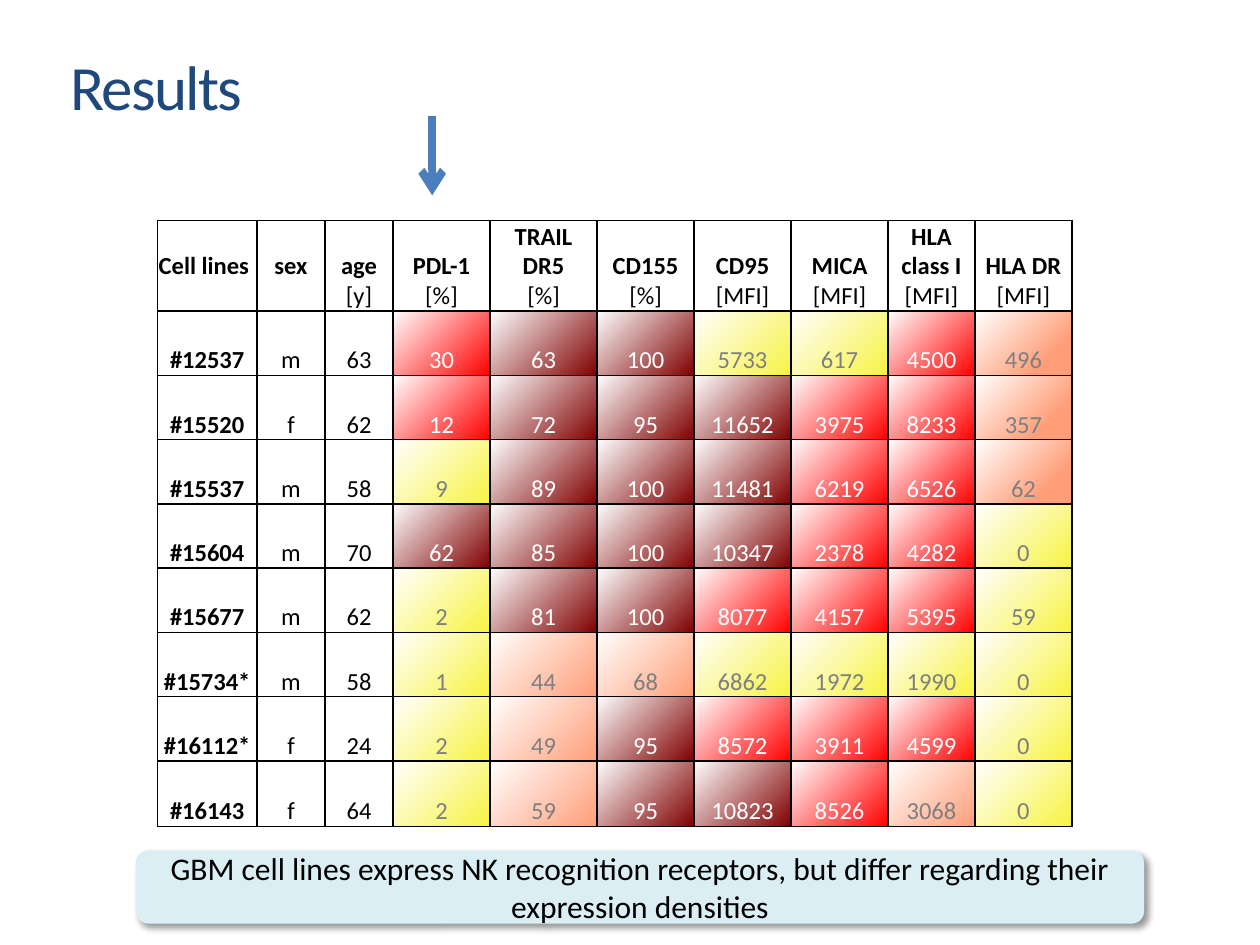
import pptx
import pptx.dml.color
import pptx.enum.shapes
import pptx.enum.text
import pptx.oxml
import pptx.oxml.ns
import pptx.util
from pptx.util import Inches

ALIGN = pptx.enum.text.PP_ALIGN
ANCHOR = pptx.enum.text.MSO_ANCHOR
NAMESPACE = pptx.oxml.ns.nsdecls("a")

COLOURS = {
    "title": "1F497D", "text": "000000", "border": "000000", "white": "FFFFFF",
    "grey": "7F7F7F", "arrow": "4B7EBC", "callout": "DBEEF4", "shadow": "000000",
}
# Expression level: fill colour, text colour
LEVELS = {
    "V": ("800000", "white"),  # very high
    "H": ("FF0000", "white"),  # high
    "M": ("FF9E78", "grey"),   # medium
    "L": ("F7F342", "grey"),   # low
}

COLUMN_WIDTHS = [0.79, 0.54, 0.54, 0.77, 0.85, 0.77, 0.77, 0.77, 0.69, 0.77]
ROW_HEIGHTS = [0.67] + [0.51] * 7 + [0.52]
HEADERS = [
    ("Cell lines", ""), ("sex", ""), ("age", "[y]"), ("PDL-1", "[%]"),
    ("TRAIL DR5", "[%]"), ("CD155", "[%]"), ("CD95", "[MFI]"),
    ("MICA", "[MFI]"), ("HLA class I", "[MFI]"), ("HLA DR", "[MFI]"),
]
# Cell line, sex, age and receptor values, then the level of each receptor
CELL_LINES = [
    ("#12537 m 63 30 63 100 5733 617 4500 496", "HVVLLHM"),
    ("#15520 f 62 12 72 95 11652 3975 8233 357", "HVVVHHM"),
    ("#15537 m 58 9 89 100 11481 6219 6526 62", "LVVVHHM"),
    ("#15604 m 70 62 85 100 10347 2378 4282 0", "VVVVHHL"),
    ("#15677 m 62 2 81 100 8077 4157 5395 59", "LVVHHHL"),
    ("#15734* m 58 1 44 68 6862 1972 1990 0", "LMMLLLL"),
    ("#16112* f 24 2 49 95 8572 3911 4599 0", "LMVHHHL"),
    ("#16143 f 64 2 59 95 10823 8526 3068 0", "LMVVHML"),
]
FIRST_RECEPTOR = 3
HLA_DR = 9


def rgb(name):
    return pptx.dml.color.RGBColor.from_string(COLOURS[name])


def add_xml(parent, xml):
    """Append a DrawingML element, its namespace put in after the tag name."""
    tag, rest = xml.split(" ", 1)
    parent.append(pptx.oxml.parse_xml(f"{tag} {NAMESPACE} {rest}"))


def write_text(paragraph, text, size=14, colour="text", bold=False,
               align=ALIGN.CENTER, spacing=None):
    paragraph.alignment = align
    run = paragraph.add_run()
    run.text = text
    font = run.font
    font.name, font.size, font.bold = "Calibri", pptx.util.Pt(size), bold
    font.color.rgb = rgb(colour)
    if spacing is not None:
        run._r.get_or_add_rPr().set("spc", str(spacing))


def add_title(slide, text):
    title = slide.shapes.title
    title.left, title.top = Inches(0.46), Inches(0.14)
    title.width, title.height = Inches(9), Inches(1.08)
    title.text_frame.vertical_anchor = ANCHOR.MIDDLE
    write_text(title.text_frame.paragraphs[0], text, size=36, colour="title",
               align=ALIGN.LEFT, spacing=-100)


def format_cell(cell, bottom=0):
    cell.vertical_anchor = ANCHOR.BOTTOM
    cell.margin_left = cell.margin_right = cell.margin_top = Inches(0.01)
    cell.margin_bottom = Inches(bottom)
    properties = cell._tc.get_or_add_tcPr()
    for side in ("lnL", "lnR", "lnT", "lnB"):
        add_xml(properties, f'<a:{side} w="12700"><a:solidFill>'
                f'<a:srgbClr val="{COLOURS["border"]}"/></a:solidFill></a:{side}>')
    cell.fill.background()


def shade_cell(cell, colour, start=0):
    """Radial gradient from the bottom right corner, fading to white."""
    properties = cell._tc.get_or_add_tcPr()
    properties.remove(properties.find(pptx.oxml.ns.qn("a:noFill")))
    add_xml(properties, f'<a:gradFill rotWithShape="1"><a:gsLst>'
            f'<a:gs pos="{start * 1000}"><a:srgbClr val="{colour}"/></a:gs>'
            f'<a:gs pos="100000"><a:srgbClr val="{COLOURS["white"]}"/></a:gs>'
            '</a:gsLst><a:path path="circle">'
            '<a:fillToRect l="100000" t="100000"/></a:path></a:gradFill>')


def fill_header(table):
    for column, (label, unit) in enumerate(HEADERS):
        cell = table.cell(0, column)
        # Labels without a unit stay level with the other labels
        format_cell(cell, bottom=0 if unit else 0.24)
        write_text(cell.text_frame.paragraphs[0], label, bold=True,
                   align=ALIGN.CENTER if column else ALIGN.LEFT)
        if unit:
            write_text(cell.text_frame.add_paragraph(), unit)


def fill_row(table, row, values, levels):
    for column, value in enumerate(values.split()):
        cell = table.cell(row, column)
        format_cell(cell)
        colour = "text"
        if column >= FIRST_RECEPTOR:
            level = levels[column - FIRST_RECEPTOR]
            fill, colour = LEVELS[level]
            shade_cell(cell, fill, 24 if level == "M" and column == HLA_DR else 0)
        write_text(cell.text_frame.paragraphs[0], value, colour=colour,
                   bold=column == 0)


def add_expression_table(slide):
    table = slide.shapes.add_table(
        len(ROW_HEIGHTS), len(COLUMN_WIDTHS), Inches(1.25), Inches(1.75),
        Inches(sum(COLUMN_WIDTHS)), Inches(sum(ROW_HEIGHTS))).table
    table.first_row = table.horz_banding = False
    for column, width in zip(table.columns, COLUMN_WIDTHS):
        column.width = Inches(width)
    for row, height in zip(table.rows, ROW_HEIGHTS):
        row.height = Inches(height)
    fill_header(table)
    for row, (values, levels) in enumerate(CELL_LINES, start=1):
        fill_row(table, row, values, levels)


def add_arrow(slide, x, top, bottom):
    arrow = slide.shapes.add_connector(
        pptx.enum.shapes.MSO_CONNECTOR.STRAIGHT,
        Inches(x), Inches(top), Inches(x), Inches(bottom))
    arrow.line.color.rgb = rgb("arrow")
    arrow.line.width = pptx.util.Pt(4.5)
    add_xml(arrow.line._get_or_add_ln(), '<a:tailEnd type="arrow"/>')
    add_xml(arrow._element.spPr, "<a:effectLst />")


def add_callout(slide, text):
    callout = slide.shapes.add_shape(
        pptx.enum.shapes.MSO_SHAPE.ROUNDED_RECTANGLE,
        Inches(1.08), Inches(6.75), Inches(8), Inches(0.58))
    callout.fill.solid()
    callout.fill.fore_color.rgb = rgb("callout")
    callout.line.fill.background()
    add_xml(callout._element.spPr,
            '<a:effectLst ><a:outerShdw blurRad="50800" dist="38100" dir="2700000" '
            f'algn="tl" rotWithShape="0"><a:srgbClr val="{COLOURS["shadow"]}">'
            '<a:alpha val="40000"/></a:srgbClr></a:outerShdw></a:effectLst>')
    callout.text_frame.word_wrap = True
    callout.text_frame.vertical_anchor = ANCHOR.MIDDLE
    write_text(callout.text_frame.paragraphs[0], text, size=18)


def main():
    presentation = pptx.Presentation()
    presentation.slide_width, presentation.slide_height = Inches(10), Inches(7.5)
    slide = presentation.slides.add_slide(presentation.slide_layouts[5])
    add_title(slide, "Results")
    add_expression_table(slide)
    add_arrow(slide, x=3.43, top=0.92, bottom=1.55)
    add_callout(slide, "GBM cell lines express NK recognition receptors, "
                       "but differ regarding their expression densities")
    presentation.save("out.pptx")


if __name__ == "__main__":
    main()
